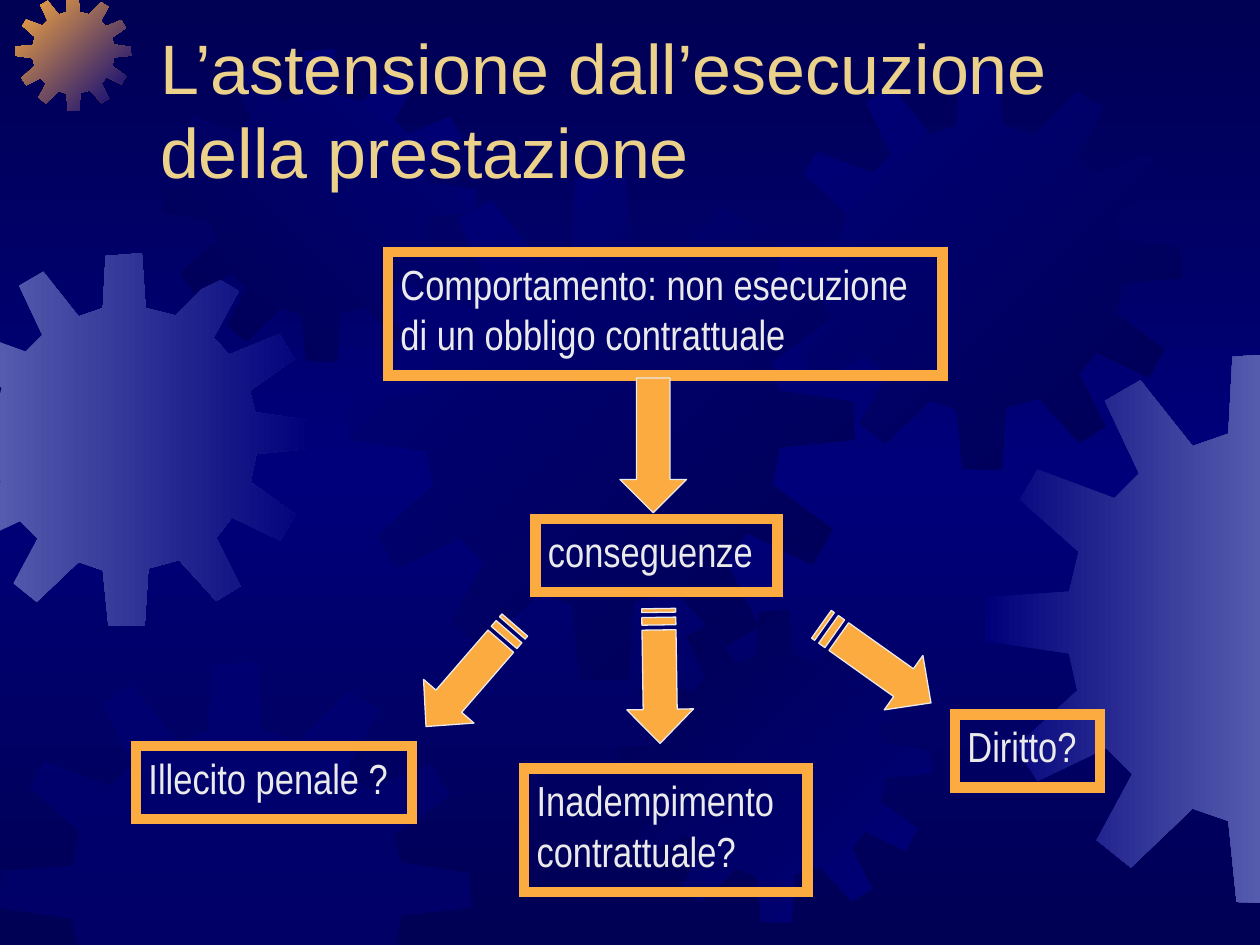
"""Build the slide on abstaining from contract performance, over a backdrop of gears."""
import copy
from dataclasses import dataclass

import lxml.etree
import pptx
import pptx.dml.color
import pptx.enum.shapes
import pptx.enum.text
import pptx.oxml
import pptx.oxml.ns
import pptx.util
from pptx.util import Inches


@dataclass(frozen=True)
class Theme:
    navy: str = "000054"
    blue: str = "00007A"
    periwinkle: str = "555BAD"
    orange: str = "FCAB40"
    gold: str = "EBD189"
    pale: str = "EAEAEA"
    title_size: int = 40
    body_size: int = 24
    frame_width: float = 6
    arrow_line: float = 0.75


theme = Theme()
rgb = pptx.dml.color.RGBColor.from_string


def write_text(shape, lines, *, size, font, color, anchor):
    frame = shape.text_frame
    frame.word_wrap = True
    frame.auto_size = pptx.enum.text.MSO_AUTO_SIZE.NONE
    frame.vertical_anchor = anchor
    for index, line in enumerate(lines):
        paragraph = frame.add_paragraph() if index else frame.paragraphs[0]
        paragraph.alignment = pptx.enum.text.PP_ALIGN.LEFT
        run = paragraph.add_run()
        run.text = line
        run.font.size = pptx.util.Pt(size)
        run.font.name = font
        run.font.color.rgb = rgb(color)


def draw_outline(contours):
    contours = [[(Inches(x), Inches(y)) for x, y in contour] for contour in contours]
    builder = slide.shapes.build_freeform(*contours[0][0])
    for index, contour in enumerate(contours):
        if index:
            builder.move_to(*contour[0])
        builder.add_line_segments(contour[1:], close=True)
    shape = builder.convert_to_shape()
    shape.shadow.inherit = False
    return shape


presentation = pptx.Presentation()
presentation.slide_width = Inches(10)
presentation.slide_height = Inches(7.5)
slide = presentation.slides.add_slide(presentation.slide_layouts[5])

background = slide.background.fill
background.gradient()
background.gradient_angle = 270
stop_list = background.gradient_stops[0]._gs.getparent()
stop_list.append(copy.deepcopy(stop_list[0]))
for stop, position, color in zip(
    background.gradient_stops, (0, 0.5, 1), (theme.navy, theme.blue, theme.navy)
):
    stop.position = position
    stop.color.rgb = rgb(color)

GEAR_UNITS = 401
GEAR = [
    (255, 67), (223, 59), (219, 0), (180, 3), (177, 59), (151, 68), (113, 20), (87, 35),
    (112, 88), (94, 106), (38, 85), (25, 107), (68, 145), (61, 174), (1, 178), (0, 210),
    (61, 219), (67, 246), (22, 287), (38, 312), (88, 288), (107, 307), (81, 355), (106, 375),
    (151, 332), (177, 341), (183, 400), (222, 401), (226, 339), (259, 330), (299, 374),
    (325, 358), (299, 306), (316, 284), (368, 309), (384, 281), (336, 246), (342, 216),
    (401, 210), (400, 180), (341, 171), (335, 148), (383, 114), (367, 87), (313, 109),
    (296, 91), (323, 41), (297, 25),
]
SLIDE_EDGES = [(0, 1, 0), (0, -1, 10), (1, 1, 0), (1, -1, 7.5)]

gears = [
    (-0.49, 2.01, 2.96, theme.periwinkle, theme.blue, 0),
    (0.12, -0.04, 0.92, theme.orange, theme.blue, 45),
    (1.3, 0.39, 2.48, theme.navy, theme.blue, 315),
    (2.77, 1.39, 4.01, theme.blue, theme.navy, 45),
    (0, 5.25, 3.74, theme.blue, None, 0),
    (4.91, 4.84, 2.48, theme.navy, theme.blue, 45),
    (6.18, 0.53, 3.2, theme.blue, theme.navy, 45),
    (7.82, 2.8, 4.37, theme.blue, theme.periwinkle, 0),
]
for left, top, size, first_color, last_color, angle in gears:
    scale = size / GEAR_UNITS
    outline = [(left + x * scale, top + y * scale) for x, y in GEAR]
    for axis, side, edge in SLIDE_EDGES:
        clipped = []
        for start, end in zip(outline, outline[1:] + outline[:1]):
            start_depth = side * (start[axis] - edge)
            end_depth = side * (end[axis] - edge)
            if start_depth >= 0:
                clipped.append(start)
            if start_depth * end_depth < 0:
                share = start_depth / (start_depth - end_depth)
                clipped.append(tuple(a + share * (b - a) for a, b in zip(start, end)))
        outline = clipped
    gear = draw_outline([outline])
    gear.line.fill.background()
    if last_color:
        gear.fill.gradient()
        gear.fill.gradient_angle = (360 - angle) % 360
        for stop, position, color in zip(
            gear.fill.gradient_stops, (0, 1), (first_color, last_color)
        ):
            stop.position = position
            stop.color.rgb = rgb(color)
    else:
        gear.fill.solid()
        gear.fill.fore_color.rgb = rgb(first_color)
        solid_color = gear._element.spPr.find(".//" + pptx.oxml.ns.qn("a:srgbClr"))
        alpha = lxml.etree.SubElement(solid_color, pptx.oxml.ns.qn("a:alpha"))
        alpha.set("val", "50000")

title = slide.shapes.title
title.left, title.top = Inches(1.17), Inches(0.33)
title.width, title.height = Inches(8.5), Inches(1.25)
write_text(
    title,
    ["L’astensione dall’esecuzione della prestazione"],
    size=theme.title_size,
    font="Arial",
    color=theme.gold,
    anchor=pptx.enum.text.MSO_ANCHOR.BOTTOM,
)
slide.shapes._spTree.append(title._element)

boxes = [
    (3.08, 2, 4.4, 0.98, ["Comportamento: non esecuzione", "di un obbligo contrattuale"]),
    (4.25, 4.12, 1.92, 0.58, ["conseguenze"]),
    (1.08, 5.92, 2.19, 0.58, ["Illecito penale ?"]),
    (4.16, 6.1, 2.25, 0.98, ["Inadempimento", "contrattuale?"]),
    (7.58, 5.67, 1.15, 0.58, ["Diritto?"]),
]
for left, top, width, height, lines in boxes:
    box = slide.shapes.add_textbox(Inches(left), Inches(top), Inches(width), Inches(height))
    box.line.color.rgb = rgb(theme.orange)
    box.line.width = pptx.util.Pt(theme.frame_width)
    miter = lxml.etree.SubElement(box.line._get_or_add_ln(), pptx.oxml.ns.qn("a:miter"))
    miter.set("lim", "800000")
    write_text(
        box,
        lines,
        size=theme.body_size,
        font="Arial Narrow",
        color=theme.pale,
        anchor=pptx.enum.text.MSO_ANCHOR.TOP,
    )

down_arrow = slide.shapes.add_shape(
    pptx.enum.shapes.MSO_SHAPE.DOWN_ARROW, Inches(4.92), Inches(3), Inches(0.53), Inches(1.07)
)
down_arrow.shadow.inherit = False
arrows = [down_arrow]

ARROW_HEAD = [(0.8, 0.4), (0.8, 0.53), (1.07, 0.27), (0.8, 0), (0.8, 0.13)]
ARROW_PARTS = [
    [(0.17, 0.13), (0.17, 0.4)] + ARROW_HEAD,
    [(0.07, 0.13), (0.13, 0.13), (0.13, 0.4), (0.07, 0.4)],
    [(0, 0.13), (0.03, 0.13), (0.03, 0.4), (0, 0.4)],
]
for left, top, rotation in [(3.2, 5.1, 130.9), (4.7, 5.1, 89.1), (6.42, 5, 35.4)]:
    striped_arrow = draw_outline(
        [[(left + x, top + y) for x, y in part] for part in ARROW_PARTS]
    )
    striped_arrow.rotation = rotation
    arrows.append(striped_arrow)

for arrow in arrows:
    arrow.fill.solid()
    arrow.fill.fore_color.rgb = rgb(theme.orange)
    arrow.line.color.rgb = rgb(theme.pale)
    arrow.line.width = pptx.util.Pt(theme.arrow_line)

presentation.save("out.pptx")
